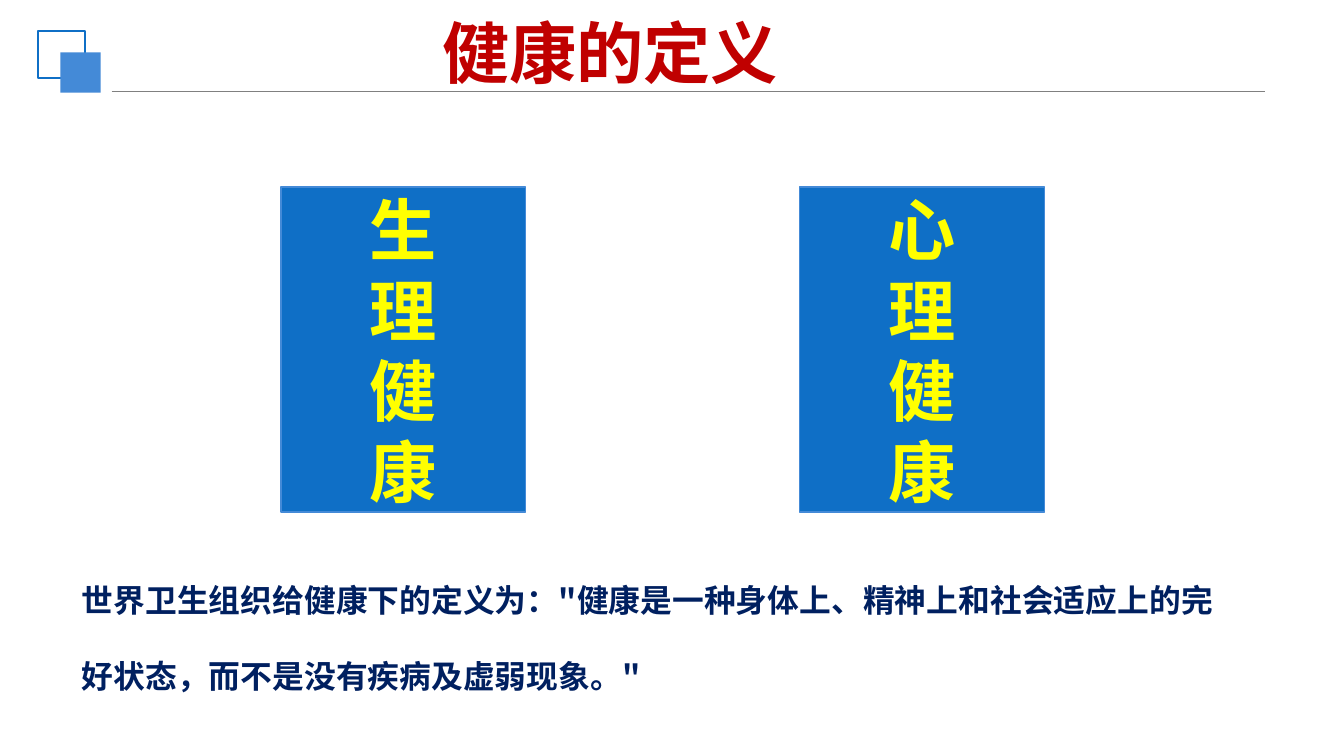
from lxml import etree
from pptx import Presentation
from pptx.dml.color import RGBColor
from pptx.enum.shapes import MSO_CONNECTOR, MSO_SHAPE
from pptx.enum.text import MSO_ANCHOR, PP_ALIGN
from pptx.oxml.ns import qn
from pptx.util import Inches, Pt

RECT = MSO_SHAPE.RECTANGLE
STRAIGHT = MSO_CONNECTOR.STRAIGHT
MIDDLE = MSO_ANCHOR.MIDDLE
CENTER = PP_ALIGN.CENTER

BLUE = RGBColor(0x0F, 0x6F, 0xC6)
LIGHT_BLUE = RGBColor(0x44, 0x8A, 0xD7)
NAVY = RGBColor(0x00, 0x20, 0x60)
RED = RGBColor(0xC0, 0x00, 0x00)
YELLOW = RGBColor(0xFF, 0xFF, 0x00)
GREY = RGBColor(0x80, 0x80, 0x80)

CJK_FONT = "Noto Sans CJK SC"
LATIN_FONT = "Times New Roman"


def style(p, size, color, latin=CJK_FONT):
    """Set a bold paragraph font, with the CJK face for Chinese text."""
    f = p.font
    f.size, f.bold, f.name = Pt(size), True, latin
    f.color.rgb = color
    rpr = p._p.pPr.find(qn("a:defRPr"))
    etree.SubElement(rpr, qn("a:ea")).set("typeface", CJK_FONT)


def add_rect(s, box, fill=None, line=None, width=0.75):
    sp = s.shapes.add_shape(RECT, *map(Inches, box))
    sp.shadow.inherit = False
    if fill is None:
        sp.fill.background()
    else:
        sp.fill.solid()
        sp.fill.fore_color.rgb = fill
    if line is None:
        sp.line.fill.background()
    else:
        sp.line.color.rgb = line
        sp.line.width = Pt(width)
    return sp


def add_text(s, box, text, size, color):
    tf = s.shapes.add_textbox(*map(Inches, box)).text_frame
    tf.word_wrap = True
    p = tf.paragraphs[0]
    p.text = text
    style(p, size, color)
    return tf


def add_header(s, box, title):
    """Corner squares, rule along the bottom of the box, and title."""
    x, y, w, h = box
    add_rect(s, (x, y, 0.35, 0.35), line=BLUE, width=1)
    add_rect(s, (x + 0.17, y + 0.16, 0.3, 0.3), fill=LIGHT_BLUE)
    ends = (x + 0.55, y + h, x + w, y + h)
    rule = s.shapes.add_connector(STRAIGHT, *map(Inches, ends))
    rule.line.color.rgb = GREY
    rule.line.width = Pt(0.75)
    etree.SubElement(rule._element.spPr, qn("a:effectLst"))
    tf = add_text(s, (x - 0.24, y - 0.17, 9, 0.65), title, 36, RED)
    tf.vertical_anchor = MIDDLE
    tf.paragraphs[0].alignment = CENTER


def add_panel(s, box, word):
    """Blue panel with one character of the word on each line."""
    tf = add_rect(s, box, fill=BLUE, line=LIGHT_BLUE).text_frame
    tf.word_wrap = False
    tf.vertical_anchor = MIDDLE
    tf.text = "\n".join(word)
    for p in tf.paragraphs:
        p.alignment = CENTER
        style(p, 36, YELLOW, LATIN_FONT)


def add_panels(s, box, words):
    """Spread equal panels from the left to the right edge of the box."""
    x, y, w, h = box
    panel_w = 1.82
    step = (w - panel_w) / (len(words) - 1)
    for i, word in enumerate(words):
        add_panel(s, (x + i * step, y, panel_w, h), word)


def add_definition(s, box, text):
    tf = add_text(s, box, text, 17, NAVY)
    tf.paragraphs[0].line_spacing = 2.0


def main():
    prs = Presentation()
    prs.slide_width = Inches(10)
    prs.slide_height = prs.slide_width * 9 // 16
    s = prs.slides.add_slide(prs.slide_layouts[6])
    add_header(s, (0.28, 0.23, 9.13, 0.45), "健康的定义")
    add_panels(s, (2.09, 1.39, 5.68, 2.42), ("生理健康", "心理健康"))
    add_definition(
        s, (0.51, 3.99, 8.77, 1.02),
        "世界卫生组织给健康下的定义为：\"健康是一种身体上、精神上和社会适应上的"
        "完好状态，而不是没有疾病及虚弱现象。\"")
    prs.save("out.pptx")


if __name__ == "__main__":
    main()
